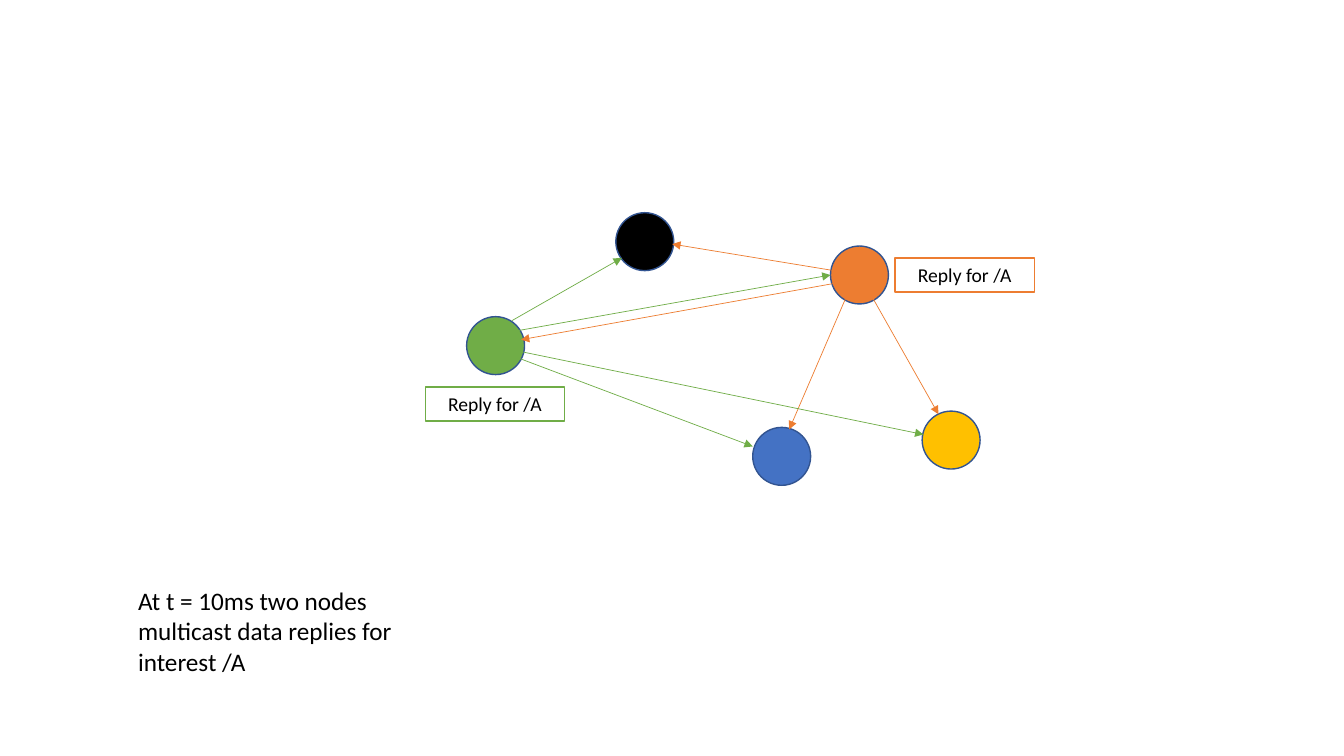
from lxml.etree import SubElement
from pptx import Presentation
from pptx.dml.color import RGBColor
from pptx.enum.shapes import MSO_CONNECTOR as Connector, MSO_SHAPE as Shape
from pptx.enum.text import MSO_ANCHOR as Anchor, PP_ALIGN as Align
from pptx.oxml.ns import qn
from pptx.util import Cm, Pt

GREEN, ORANGE = "70AD47", "ED7D31"
NODE_SIZE = 1.46
NODES = [
    (1.04, 2.62, GREEN),
    (12.52, 5, "FFC000"),
    (4.8, 0, "000000"),
    (10.21, 0.84, ORANGE),
    (8.25, 5.41, "4472C4"),
]
REPLIES = {
    ORANGE: [
        (10.31, 1.78, 2.41, 3.2),
        (10.59, 2.16, 9.17, 5.46),
        (10.24, 1.45, 6.22, 0.79),
        (11.28, 2.16, 12.93, 5.08),
    ],
    GREEN: [
        (2.18, 2.72, 4.95, 1.14),
        (2.34, 2.97, 10.21, 1.57),
        (2.41, 3.5, 12.55, 5.59),
        (2.34, 3.66, 8.25, 5.89),
    ],
}
LABELS = [(0, 4.39, GREEN), (11.84, 1.14, ORANGE)]


def color(value):
    """Turn a hex string into a colour."""
    return RGBColor.from_string(value)


def write(box, text, size=18, align=Align.LEFT, anchor=Anchor.TOP):
    """Put formatted text into a box."""
    frame = box.text_frame
    frame.word_wrap = True
    frame.vertical_anchor = anchor
    para = frame.paragraphs[0]
    para.alignment = align
    span = para.add_run()
    span.text = text
    span.font.name = "Calibri"
    span.font.size = Pt(size)
    span.font.color.rgb = color("000000")


def add_outlined(page, kind, left, top, width, height, fill, line):
    """Add a filled shape with a thin outline."""
    shape = page.shapes.add_shape(kind, Cm(left), Cm(top), Cm(width), Cm(height))
    shape.shadow.inherit = False
    shape.fill.solid()
    shape.fill.fore_color.rgb = color(fill)
    shape.line.color.rgb = color(line)
    shape.line.width = Pt(1)
    return shape


def add_arrow(page, start_x, start_y, end_x, end_y, line):
    """Add a thin arrow with a triangular head at its end."""
    arrow = page.shapes.add_connector(
        Connector.STRAIGHT, Cm(start_x), Cm(start_y), Cm(end_x), Cm(end_y))
    arrow.line.color.rgb = color(line)
    arrow.line.width = Pt(0.5)
    SubElement(arrow.line._get_or_add_ln(), qn("a:tailEnd"), type="triangle")
    SubElement(arrow._element.spPr, qn("a:effectLst"))


def add_network(page, left, top):
    """Draw the nodes, their replies and the labels from a top-left corner."""
    for x, y, fill in NODES:
        add_outlined(page, Shape.OVAL, left + x, top + y,
                     NODE_SIZE, NODE_SIZE, fill, "325491")
    for line, arrows in REPLIES.items():
        for start_x, start_y, end_x, end_y in arrows:
            add_arrow(page, left + start_x, top + start_y,
                      left + end_x, top + end_y, line)
    for x, y, line in LABELS:
        label = add_outlined(page, Shape.RECTANGLE, left + x, top + y,
                             3.51, 0.86, "FFFFFF", line)
        write(label, "Reply for /A", size=14, align=Align.CENTER,
              anchor=Anchor.MIDDLE)


def add_caption(page, left, top, width, height):
    """Add the explanation below the network."""
    box = page.shapes.add_textbox(Cm(left), Cm(top), Cm(width), Cm(height))
    write(box, "At t = 10ms two nodes multicast data replies for interest /A")


def main():
    """Build and save the deck."""
    deck = Presentation()
    deck.slide_width, deck.slide_height = Cm(33.87), Cm(19.05)
    page = deck.slides.add_slide(deck.slide_layouts[6])
    add_network(page, 10.72, 5.36)
    add_caption(page, 3.23, 14.63, 7.62, 2.57)
    deck.save("out.pptx")


if __name__ == "__main__":
    main()
